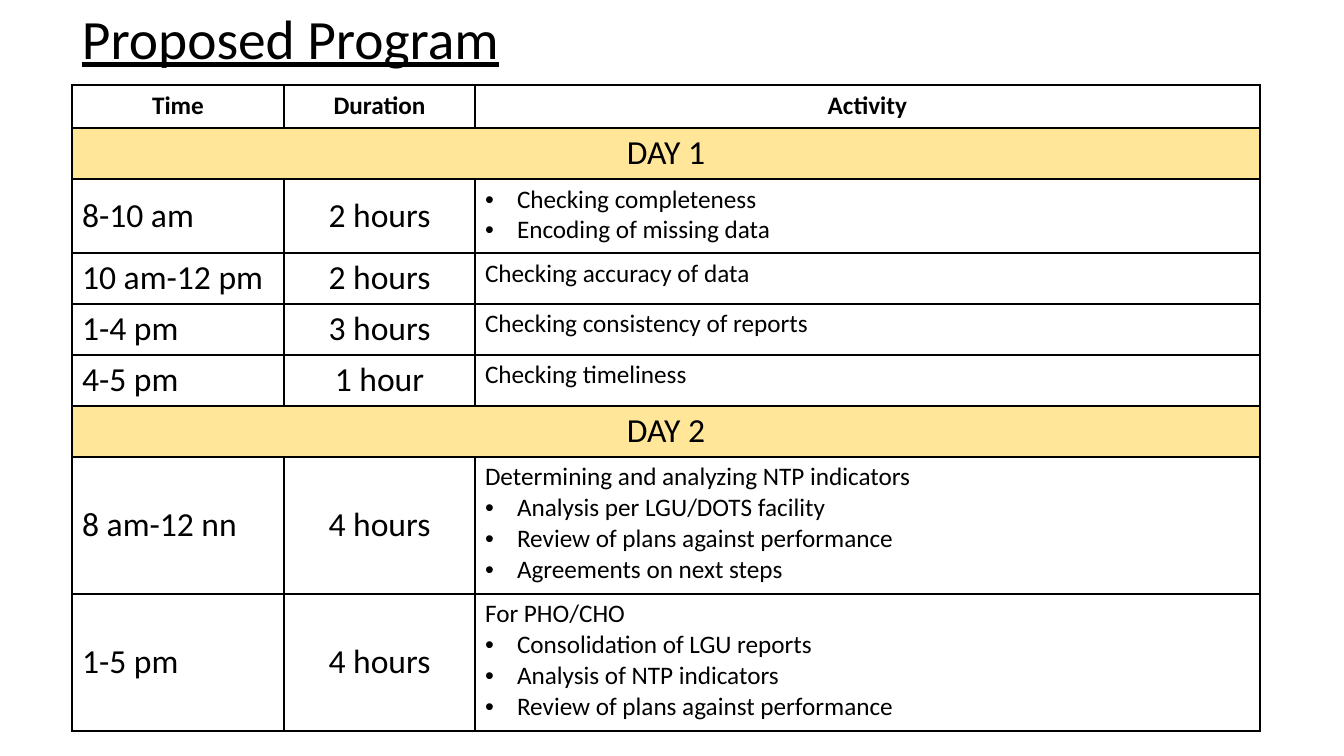
from pptx import Presentation
from pptx import util as u
from pptx.dml.color import RGBColor
from pptx.enum import text
from pptx.oxml import parse_xml
from pptx.oxml.ns import nsdecls

PX = 9071.43
BLACK, WHITE, GOLD = "000000", "FFFFFF", "FFE699"
LEFT, MID = text.PP_ALIGN.LEFT, text.PP_ALIGN.CENTER
TOP, HALF = text.MSO_ANCHOR.TOP, text.MSO_ANCHOR.MIDDLE


def px(n):
    return u.Emu(round(n * PX))


def write(frame, lines, size=18, bold=False, line=False, align=LEFT, space=None):
    for i, words in enumerate(lines):
        para = frame.add_paragraph() if i else frame.paragraphs[0]
        para.alignment = align
        if space:
            para.line_spacing = space
        run = para.add_run()
        run.text = words.removeprefix("• ")
        font = run.font
        font.name, font.size = "Calibri", u.Pt(size)
        font.bold, font.underline = bold, line
        font.color.rgb = RGBColor.from_string(BLACK)
        if words.startswith("• "):
            props = para._p.get_or_add_pPr()
            props.set("marL", str(px(32)))
            props.set("indent", str(-px(32)))
            props.append(parse_xml(f'<a:buFont {nsdecls("a")} typeface="Arial"/>'))
            props.append(parse_xml(f'<a:buChar {nsdecls("a")} char="•"/>'))


deck = Presentation()
deck.slide_width, deck.slide_height = px(1344), px(756)
slide = deck.slides.add_slide(deck.slide_layouts[6])

title = slide.shapes.add_textbox(px(72), px(18), px(1159), px(46)).text_frame
title.word_wrap = True
title.vertical_anchor = HALF
write(title, ["Proposed Program"], size=39.6, line=True, space=0.9)

rows = [
    (43, ["Time", "Duration", "Activity"]),
    (51, ["DAY 1"]),
    (74, ["8-10 am", "2 hours", "• Checking completeness\n• Encoding of missing data"]),
    (51, ["10 am-12 pm", "2 hours", "Checking accuracy of data"]),
    (51, ["1-4 pm", "3 hours", "Checking consistency of reports"]),
    (51, ["4-5 pm", "1 hour", "Checking timeliness"]),
    (51, ["DAY 2"]),
    (137, ["8 am-12 nn", "4 hours",
           "Determining and analyzing NTP indicators\n• Analysis per LGU/DOTS facility\n"
           "• Review of plans against performance\n• Agreements on next steps"]),
    (137, ["1-5 pm", "4 hours",
           "For PHO/CHO\n• Consolidation of LGU reports\n"
           "• Analysis of NTP indicators\n• Review of plans against performance"]),
]
cols = [212, 191, 785]
high = sum(tall for tall, _ in rows)
table = slide.shapes.add_table(
    len(rows), len(cols), px(72), px(85), px(sum(cols)), px(high)).table
table.first_row = table.horz_banding = False
for col, wide in zip(table.columns, cols):
    col.width = px(wide)

for r, (tall, words) in enumerate(rows):
    table.rows[r].height = px(tall)
    day = len(words) == 1
    if day:
        table.cell(r, 0).merge(table.cell(r, 2))
    for c in range(len(cols)):
        cell = table.cell(r, c)
        cell.fill.solid()
        cell.fill.fore_color.rgb = RGBColor.from_string(GOLD if day else WHITE)
        cell.vertical_anchor = TOP if r == 0 or c == 2 else HALF
        for i, side in enumerate("LRTB"):
            cell._tc.tcPr.insert(i, parse_xml(
                f'<a:ln{side} {nsdecls("a")} w="12700"><a:solidFill>'
                f'<a:srgbClr val="{BLACK}"/></a:solidFill></a:ln{side}>'))
        if c < len(words):
            write(cell.text_frame, words[c].split("\n"),
                  size=18 if r == 0 or c == 2 else 24, bold=r == 0,
                  align=MID if r == 0 or day or c == 1 else LEFT)

deck.save("out.pptx")
